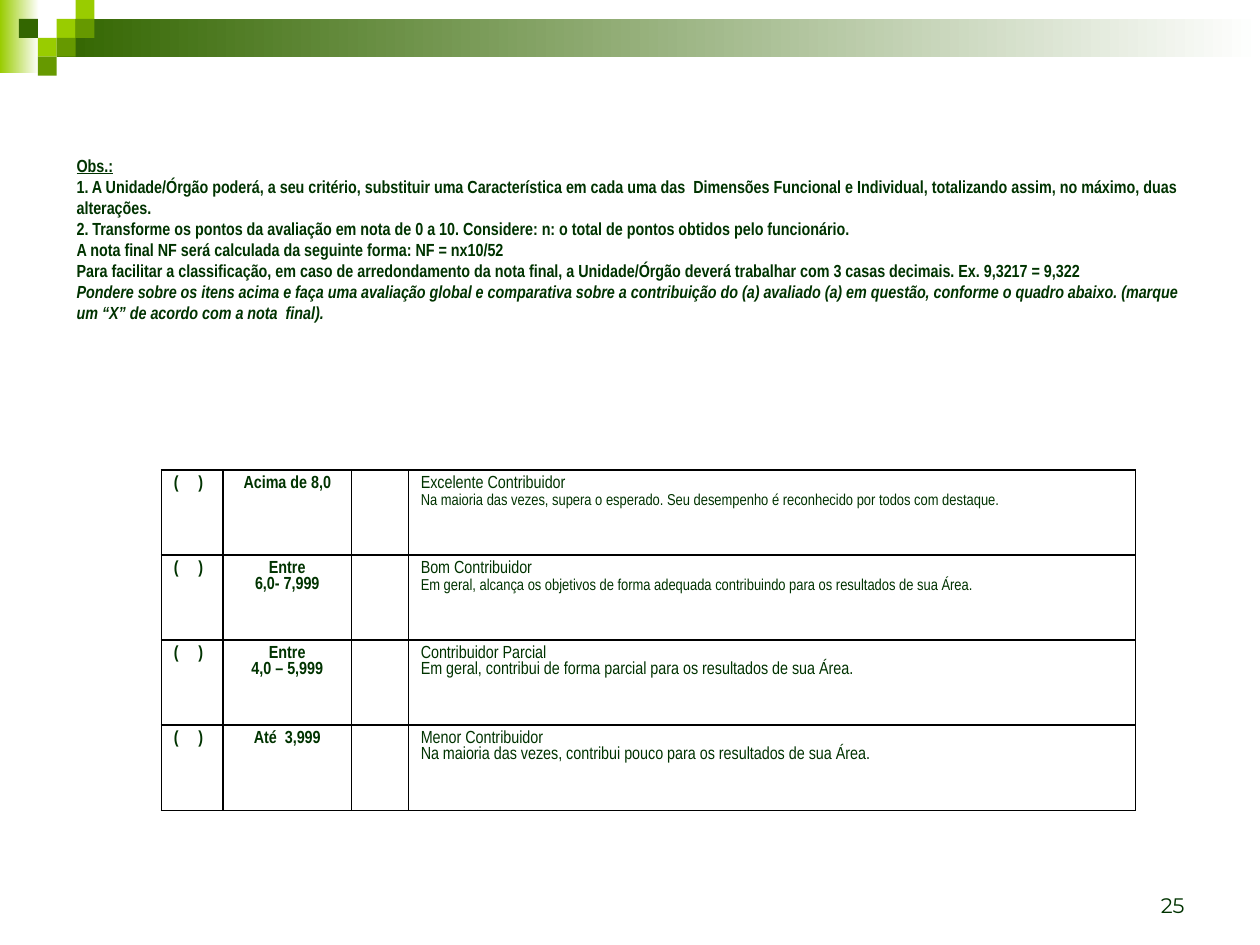
from pptx import Presentation
from pptx.util import Inches, Pt
from pptx.dml.color import RGBColor
from pptx.enum.shapes import MSO_SHAPE
from pptx.enum.text import MSO_ANCHOR, PP_ALIGN
from pptx.oxml import parse_xml
from pptx.oxml.ns import nsdecls

LIME = RGBColor(0x99, 0xCC, 0x00)
LEAF = RGBColor(0x66, 0x99, 0x00)
MOSS = RGBColor(0x33, 0x66, 0x00)
INK = RGBColor(0x00, 0x33, 0x00)
WHITE = RGBColor(0xFF, 0xFF, 0xFF)
BLACK = RGBColor(0x00, 0x00, 0x00)

WIDE, HIGH = 10, 7.5
UNIT = 0.15  # side of one square in the corner pattern

# column, row and colour of each square
TILES = [(3, 1, LIME), (4, 0, LIME), (4, 1, LEAF), (2, 2, LIME),
         (1, 1, MOSS), (3, 2, LEAF), (2, 3, LEAF)]

NOTES = [
    ("Obs.:", {"line": True}),
    ("1. A Unidade/Órgão poderá, a seu critério, substituir uma Característica em cada uma das  "
     "Dimensões Funcional e Individual, totalizando assim, no máximo, duas alterações.", {}),
    ("2. Transforme os pontos da avaliação em nota de 0 a 10. "
     "Considere: n: o total de pontos obtidos pelo funcionário.", {}),
    ("A nota final NF será calculada da seguinte forma: NF = nx10/52", {}),
    ("Para facilitar a classificação, em caso de arredondamento da nota final, "
     "a Unidade/Órgão deverá trabalhar com 3 casas decimais. Ex. 9,3217 = 9,322", {}),
    ("Pondere sobre os itens acima e faça uma avaliação global e comparativa sobre a contribuição "
     "do (a) avaliado (a) em questão, conforme o quadro abaixo. "
     "(marque um “X” de acordo com a nota  final).", {"slant": True}),
]

# score range, grade, meaning and size of the meaning
GRADES = [
    (["Acima de 8,0"], "Excelente Contribuidor",
     "Na maioria das vezes, supera o esperado. "
     "Seu desempenho é reconhecido por todos com destaque.", 9),
    (["Entre", "6,0- 7,999"], "Bom Contribuidor",
     "Em geral, alcança os objetivos de forma adequada "
     "contribuindo para os resultados de sua Área.", 9),
    (["Entre", "4,0 – 5,999"], "Contribuidor Parcial",
     "Em geral, contribui de forma parcial para os resultados de sua Área.", 10),
    (["Até  3,999"], "Menor Contribuidor",
     "Na maioria das vezes, contribui pouco para os resultados de sua Área.", 10),
]
COLS = [0.49, 1.02, 0.45, 5.77]
ROW = 0.675
PITCH = Pt(9.2)  # line height inside the table


def write(frame, text, first=False, size=10, font="Arial Narrow", bold=False,
          slant=False, line=False, align=PP_ALIGN.LEFT, gap=None):
    """Put one paragraph of text into a frame."""
    para = frame.paragraphs[0] if first else frame.add_paragraph()
    para.alignment = align
    if gap:
        para.line_spacing = gap
    run = para.add_run()
    run.text = text
    face = run.font
    face.name, face.size, face.color.rgb = font, Pt(size), INK
    face.bold, face.italic, face.underline = bold, slant, line


def block(slide, left, top, width, height, tone, fade=False):
    """Draw a plain rectangle, or one that fades to white."""
    box = slide.shapes.add_shape(MSO_SHAPE.RECTANGLE, Inches(left), Inches(top),
                                 Inches(width), Inches(height))
    box.shadow.inherit = False
    box.line.fill.background()
    if fade:
        box.fill.gradient()
        box.fill.gradient_angle = 0
        for stop, hue, place in zip(box.fill.gradient_stops, (tone, WHITE), (0, 1)):
            stop.color.rgb, stop.position = hue, place
    else:
        box.fill.solid()
        box.fill.fore_color.rgb = tone


def label(slide, left, top, width, height, anchor):
    """Add an empty text box and return its frame."""
    box = slide.shapes.add_textbox(Inches(left), Inches(top), Inches(width), Inches(height))
    frame = box.text_frame
    frame.word_wrap = True
    frame.vertical_anchor = anchor
    return frame


def rule(cell):
    """Give a cell thin lines on all sides and no fill."""
    cell.fill.background()
    props = cell._tc.get_or_add_tcPr()
    for spot, side in enumerate("LRTB"):
        props.insert(spot, parse_xml(
            f'<a:ln{side} {nsdecls("a")} w="{Pt(0.75)}"><a:solidFill>'
            f'<a:srgbClr val="{BLACK}"/></a:solidFill></a:ln{side}>'))


def grid(slide, left, top):
    """Build the table of grades."""
    count = len(GRADES)
    table = slide.shapes.add_table(count, len(COLS), Inches(left), Inches(top),
                                   Inches(sum(COLS)), Inches(ROW * count)).table
    table.first_row = table.horz_banding = False
    for col, width in zip(table.columns, COLS):
        col.width = Inches(width)
    for row, (span, grade, sense, size) in zip(table.rows, GRADES):
        row.height = Inches(ROW)
        for cell in row.cells:
            rule(cell)
        mark, score, _, text = [cell.text_frame for cell in row.cells]
        write(mark, "(     )", first=True, bold=True, gap=PITCH)
        for spot, part in enumerate(span):
            write(score, part, first=spot == 0, bold=True, align=PP_ALIGN.CENTER, gap=PITCH)
        write(text, grade, first=True, align=PP_ALIGN.JUSTIFY, gap=PITCH)
        write(text, sense, size=size, align=PP_ALIGN.JUSTIFY, gap=PITCH)


def main():
    deck = Presentation()
    deck.slide_width, deck.slide_height = Inches(WIDE), Inches(HIGH)
    slide = deck.slides.add_slide(deck.slide_layouts[6])

    # Top band and corner squares
    block(slide, 0, 0, 0.31, 0.58, LIME, fade=True)
    block(slide, 3 * UNIT, UNIT, WIDE - 3 * UNIT, 2 * UNIT, MOSS, fade=True)
    for col, row, tone in TILES:
        block(slide, col * UNIT, row * UNIT, UNIT, UNIT, tone)

    # Page number
    page = label(slide, 7.17, 6.83, 2.33, 0.5, MSO_ANCHOR.BOTTOM)
    write(page, "25", first=True, size=12, font="Montserrat", align=PP_ALIGN.RIGHT)

    # Notes
    notes = label(slide, 0.51, 1.15, 9.1, 1.73, MSO_ANCHOR.TOP)
    notes.margin_top = Inches(0.08)
    for spot, (text, look) in enumerate(NOTES):
        write(notes, text, first=spot == 0, bold=True, **look)

    # Grades
    grid(slide, 1.28, 3.73)
    deck.save("out.pptx")


if __name__ == "__main__":
    main()
